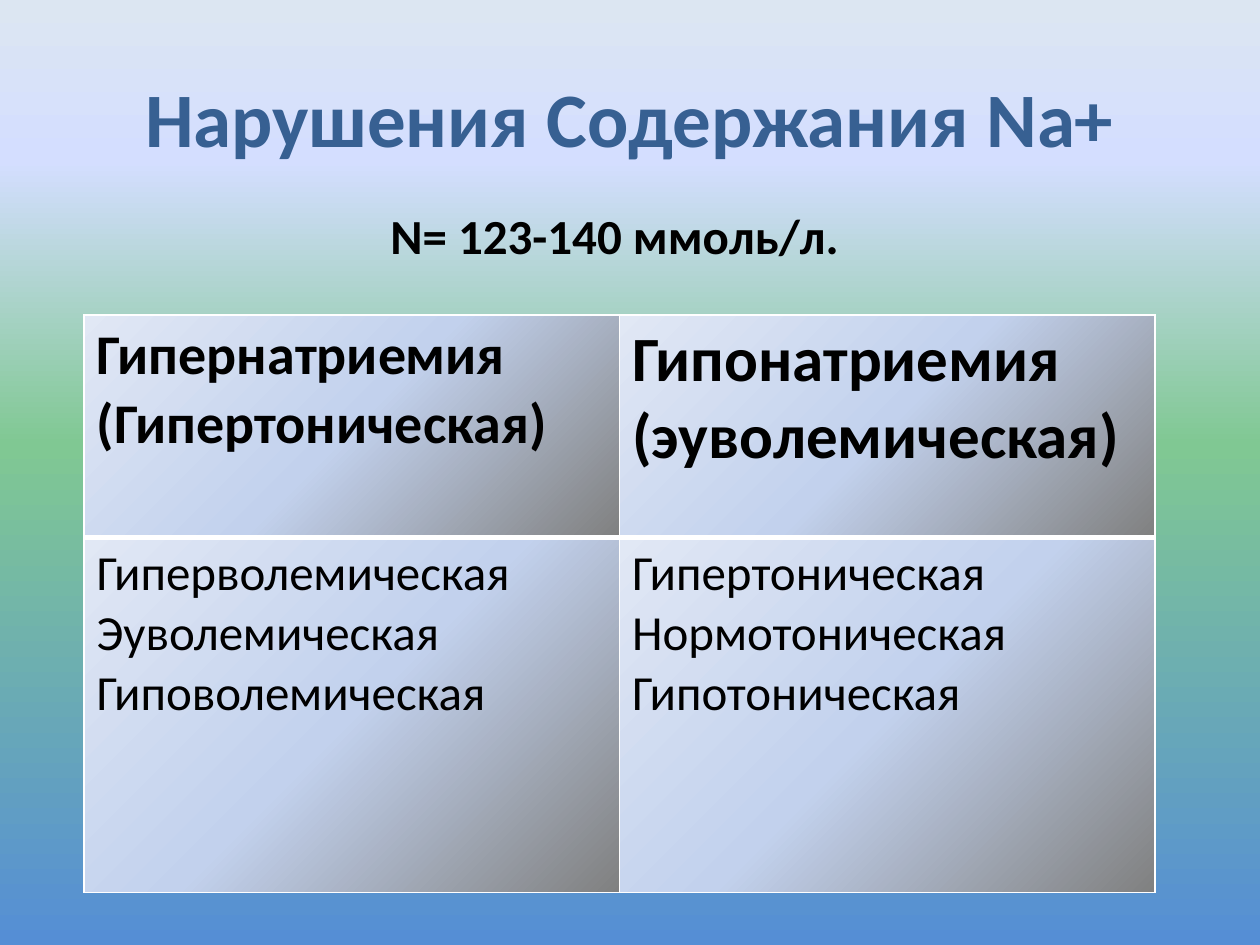
import pptx
import pptx.dml.color
import pptx.enum.text
import pptx.oxml
import pptx.oxml.ns
import pptx.util
from lxml import etree

RGBColor = pptx.dml.color.RGBColor
qn = pptx.oxml.ns.qn

TITLE_BLUE = RGBColor(0x37, 0x60, 0x92)
BLACK = RGBColor(0, 0, 0)
WHITE = RGBColor(0xFF, 0xFF, 0xFF)

# Gradient stops: percentage and colour
BACKGROUND_STOPS = [
    (0, RGBColor(0x55, 0x8E, 0xD5)),
    (53, RGBColor(0x80, 0xC8, 0x93)),
    (83, RGBColor(0xD4, 0xDE, 0xFF)),
    (100, RGBColor(0xDC, 0xE6, 0xF2)),
]
CELL_STOPS = [
    (0, RGBColor(0x80, 0x80, 0x80)),
    (50, RGBColor(0xC2, 0xD1, 0xED)),
    (100, RGBColor(0xE1, 0xE8, 0xF5)),
]

# Each cell: text size, bold, lines
TABLE_ROWS = [
    [(32, True, ["Гипернатриемия", "(Гипертоническая)"]),
     (36, True, ["Гипонатриемия", "(эуволемическая)"])],
    [(28, False, ["Гиперволемическая", "Эуволемическая", "Гиповолемическая"]),
     (28, False, ["Гипертоническая", "Нормотоническая", "Гипотоническая"])],
]


class SlideBuilder:
    """Holds the style and the current slide; lengths are in grid units."""

    font_name = "Calibri"
    columns, rows = 12, 9

    def __init__(self, presentation):
        self.unit_x = presentation.slide_width / self.columns
        self.unit_y = presentation.slide_height / self.rows
        self.slide = presentation.slides.add_slide(presentation.slide_layouts[5])

    def box(self, left, top, width, height):
        return (round(left * self.unit_x), round(top * self.unit_y),
                round(width * self.unit_x), round(height * self.unit_y))

    def fill_text(self, text_frame, lines, size, color=BLACK, bold=True, align=None):
        text_frame.text = "\n".join(lines)
        text_frame.word_wrap = True
        values = {"name": self.font_name, "size": pptx.util.Pt(size), "bold": bold}
        for paragraph in text_frame.paragraphs:
            paragraph.alignment = align
            for run in paragraph.runs:
                for name, value in values.items():
                    setattr(run.font, name, value)
                run.font.color.rgb = color

    def gradient(self, fill, element, stops, angle):
        fill.gradient()
        fill.gradient_angle = angle
        stop_list = element.find(".//" + qn("a:gsLst"))
        for stop in list(stop_list):
            stop_list.remove(stop)
        for percent, color in stops:
            stop = etree.SubElement(stop_list, qn("a:gs"), pos=str(percent * 1000))
            etree.SubElement(stop, qn("a:srgbClr"), val=str(color))

    def background(self, stops, angle):
        self.gradient(self.slide.background.fill, self.slide.element, stops, angle)

    def title(self, text, *area):
        shape = self.slide.shapes.title
        shape.left, shape.top, shape.width, shape.height = self.box(*area)
        shape.text_frame.vertical_anchor = pptx.enum.text.MSO_ANCHOR.MIDDLE
        self.fill_text(shape.text_frame, [text], 44, TITLE_BLUE,
                       align=pptx.enum.text.PP_ALIGN.CENTER)

    def text(self, text, *area):
        shape = self.slide.shapes.add_textbox(*self.box(*area))
        self.fill_text(shape.text_frame, [text], 28)

    def borders(self, cell, widths):
        properties = cell._tc.get_or_add_tcPr()
        for index, (side, points) in enumerate(widths.items()):
            line = etree.Element(qn("a:ln" + side), w=str(int(pptx.util.Pt(points))))
            fill = etree.SubElement(line, qn("a:solidFill"))
            etree.SubElement(fill, qn("a:srgbClr"), val=str(WHITE))
            properties.insert(index, line)

    def table(self, rows, row_heights, *area):
        table = self.slide.shapes.add_table(
            len(rows), len(rows[0]), *self.box(*area)).table
        for row_index, cells in enumerate(rows):
            table.rows[row_index].height = round(row_heights[row_index] * self.unit_y)
            for column_index, (size, bold, lines) in enumerate(cells):
                cell = table.cell(row_index, column_index)
                self.fill_text(cell.text_frame, lines, size, bold=bold)
                self.gradient(cell.fill, cell._tc, CELL_STOPS, 135)
                # The rule under the header row is thicker
                self.borders(cell, {"L": 1, "R": 1,
                                    "T": 3 if row_index == 1 else 1,
                                    "B": 3 if row_index == 0 else 1})


def main():
    presentation = pptx.Presentation()
    presentation.slide_width = pptx.util.Inches(10)
    presentation.slide_height = pptx.util.Inches(7.5)
    builder = SlideBuilder(presentation)

    # Background and title
    builder.background(BACKGROUND_STOPS, 90)
    builder.title("Нарушения Содержания Na+", 0.6, 0.36, 10.8, 1.5)

    # Table of disorders
    builder.table(TABLE_ROWS, (2.12, 3.38), 0.8, 3, 10.2, 5.5)

    # Normal range
    builder.text("N= 123-140 ммоль/л.", 3.6, 1.9, 4.6, 0.68)

    presentation.save("out.pptx")


if __name__ == "__main__":
    main()
